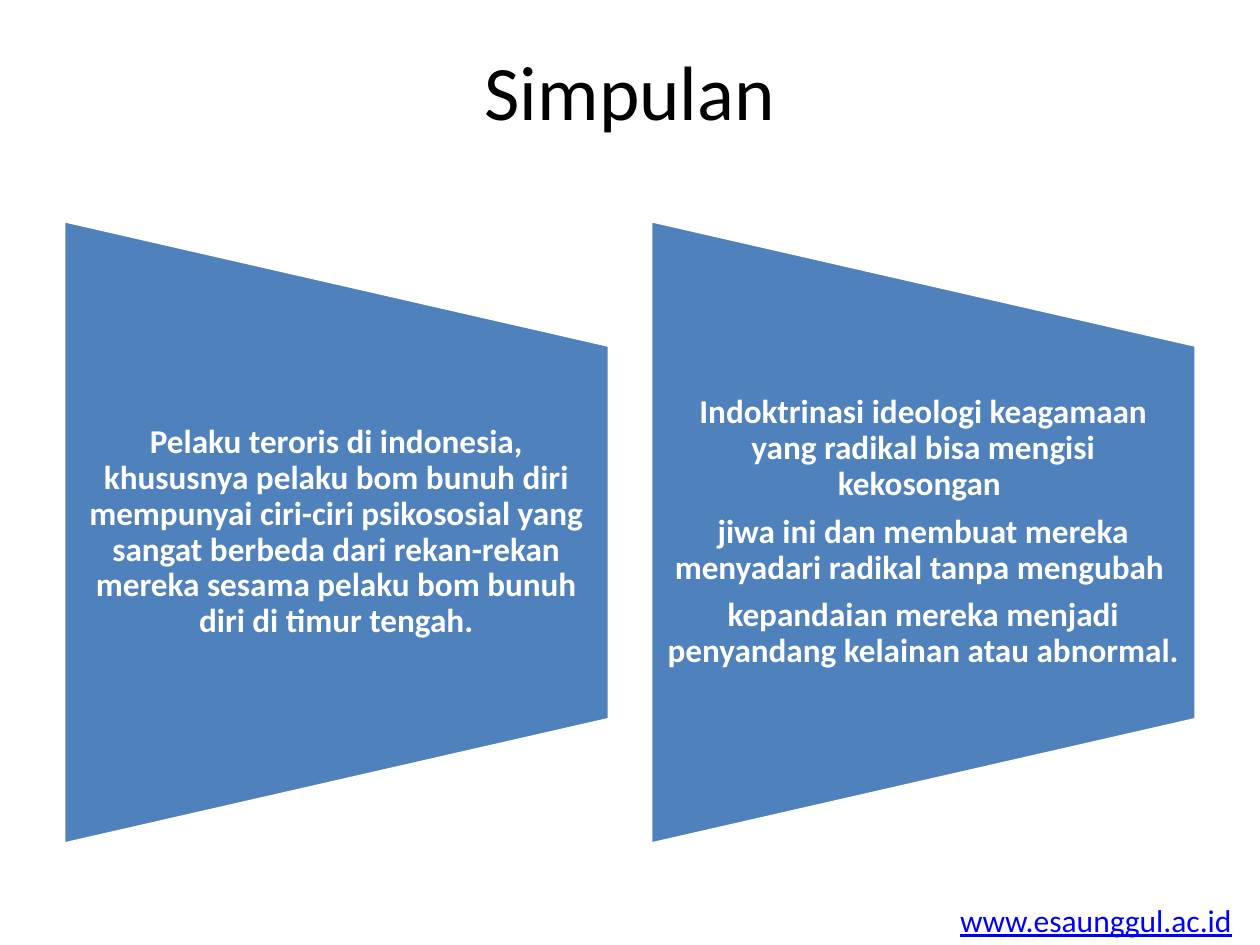
from dataclasses import dataclass

from pptx import Presentation
from pptx.dml.color import RGBColor
from pptx.enum.shapes import MSO_SHAPE
from pptx.enum.text import MSO_ANCHOR, MSO_AUTO_SIZE, PP_ALIGN
from pptx.util import Pt

TRAPEZOID = MSO_SHAPE.FLOWCHART_MANUAL_OPERATION
TOP, MIDDLE = MSO_ANCHOR.TOP, MSO_ANCHOR.MIDDLE
LEFT, CENTER = PP_ALIGN.LEFT, PP_ALIGN.CENTER
FIT_SHAPE = MSO_AUTO_SIZE.SHAPE_TO_FIT_TEXT


@dataclass(frozen=True)
class Theme:
    font: str = "Calibri"
    black: RGBColor = RGBColor(0, 0, 0)
    white: RGBColor = RGBColor(255, 255, 255)
    panel: RGBColor = RGBColor(0x4F, 0x81, 0xBD)
    link: RGBColor = RGBColor(0, 0, 255)
    title_size: float = 44
    body_size: float = 19
    footer_size: float = 18


THEME = Theme()

CONCLUSIONS = [
    ["Pelaku teroris di indonesia, khususnya pelaku bom bunuh diri mempunyai "
     "ciri-ciri psikososial yang sangat berbeda dari rekan-rekan mereka sesama "
     "pelaku bom bunuh diri di timur tengah."],
    ["Indoktrinasi ideologi keagamaan yang radikal bisa mengisi kekosongan ",
     "jiwa ini dan membuat mereka menyadari radikal tanpa mengubah ",
     "kepandaian mereka menjadi penyandang kelainan atau abnormal."],
]


def add_text(s, box, paragraphs, size, color, align=LEFT, anchor=TOP, bold=False,
             underline=False, wrap=True, insets=(7.2, 3.6, 7.2, 3.6),
             line_spacing=None, space_after=0):
    tb = s.shapes.add_textbox(*map(Pt, box))
    tf = tb.text_frame
    tf.word_wrap = wrap
    tf.vertical_anchor = anchor
    tf.margin_left, tf.margin_top, tf.margin_right, tf.margin_bottom = map(Pt, insets)
    for i, text in enumerate(paragraphs):
        p = tf.add_paragraph() if i else tf.paragraphs[0]
        p.alignment = align
        p.line_spacing = line_spacing
        p.space_after = Pt(space_after)
        r = p.add_run()
        r.text = text
        r.font.name = THEME.font
        r.font.size = Pt(size)
        r.font.bold = bold
        r.font.underline = underline
        r.font.color.rgb = color
    return tb


def add_title(s, box):
    add_text(s, box, ["Simpulan"], THEME.title_size, THEME.black, align=CENTER)


def add_panel(s, box, paragraphs):
    x, y, w, h = box
    sp = s.shapes.add_shape(TRAPEZOID, Pt(x + (w - h) / 2), Pt(y + (h - w) / 2), Pt(h), Pt(w))
    sp.rotation = 270
    sp.shadow.inherit = False
    sp.fill.solid()
    sp.fill.fore_color.rgb = THEME.panel
    sp.line.color.rgb = THEME.white
    sp.line.width = Pt(2)
    add_text(s, (x, y + h / 5, w, h * 3 / 5), paragraphs, THEME.body_size, THEME.white,
             align=CENTER, anchor=MIDDLE, bold=True, insets=(9.5, 0, 9.8, 0),
             line_spacing=0.9, space_after=0.35 * THEME.body_size)


def add_panels(s, box, gap):
    x, y, w, h = box
    count = len(CONCLUSIONS)
    panel_w = (w - gap * (count - 1)) / count
    for i, paragraphs in enumerate(CONCLUSIONS):
        add_panel(s, (x + i * (panel_w + gap), y, panel_w, h), paragraphs)


def add_footer(s, box):
    tb = add_text(s, box, ["www.esaunggul.ac.id"], THEME.footer_size, THEME.link,
                  underline=True, wrap=False)
    tb.text_frame.auto_size = FIT_SHAPE


def main():
    prs = Presentation()
    prs.slide_width, prs.slide_height = Pt(720), Pt(540)
    s = prs.slides.add_slide(prs.slide_layouts[6])
    add_footer(s, (541.5, 511.2, 171.3, 29))
    add_title(s, (36, 21.6, 648, 90))
    add_panels(s, (36.4, 126, 647.2, 356.4), 23.6)
    prs.save("out.pptx")


if __name__ == "__main__":
    main()
